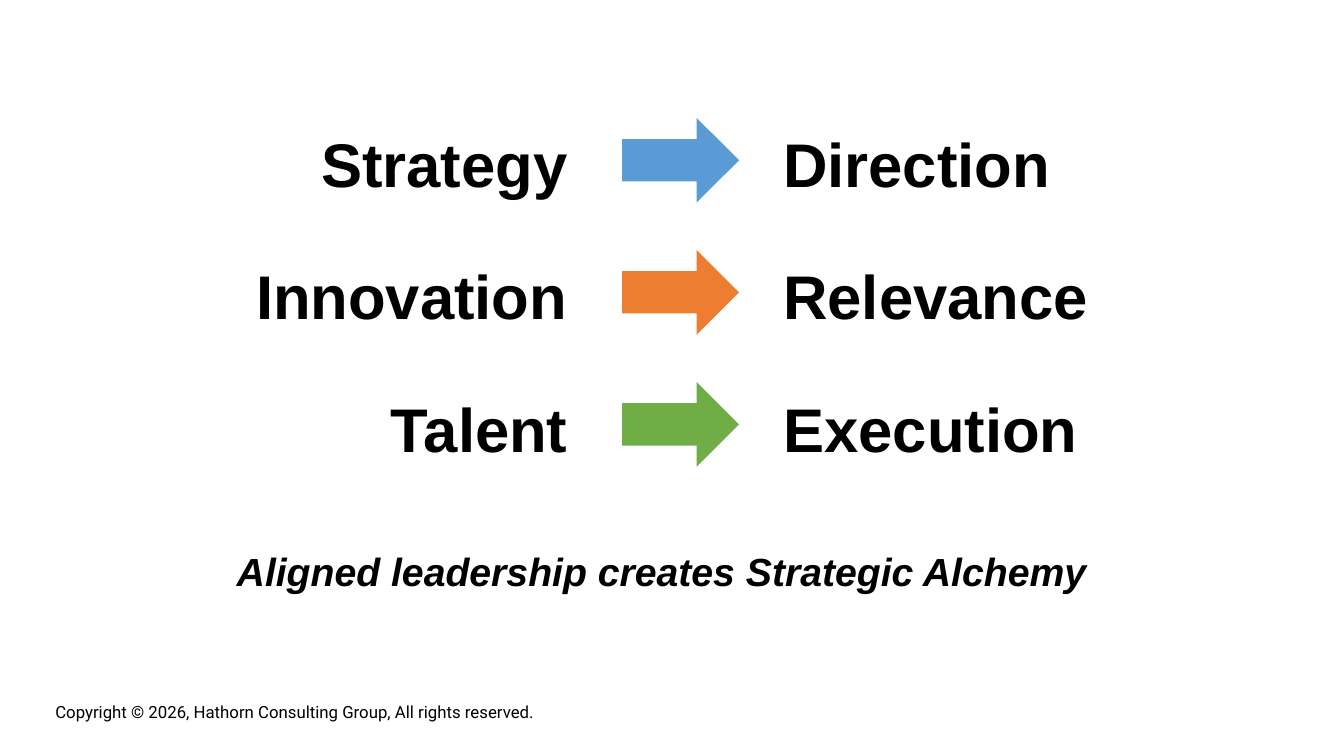
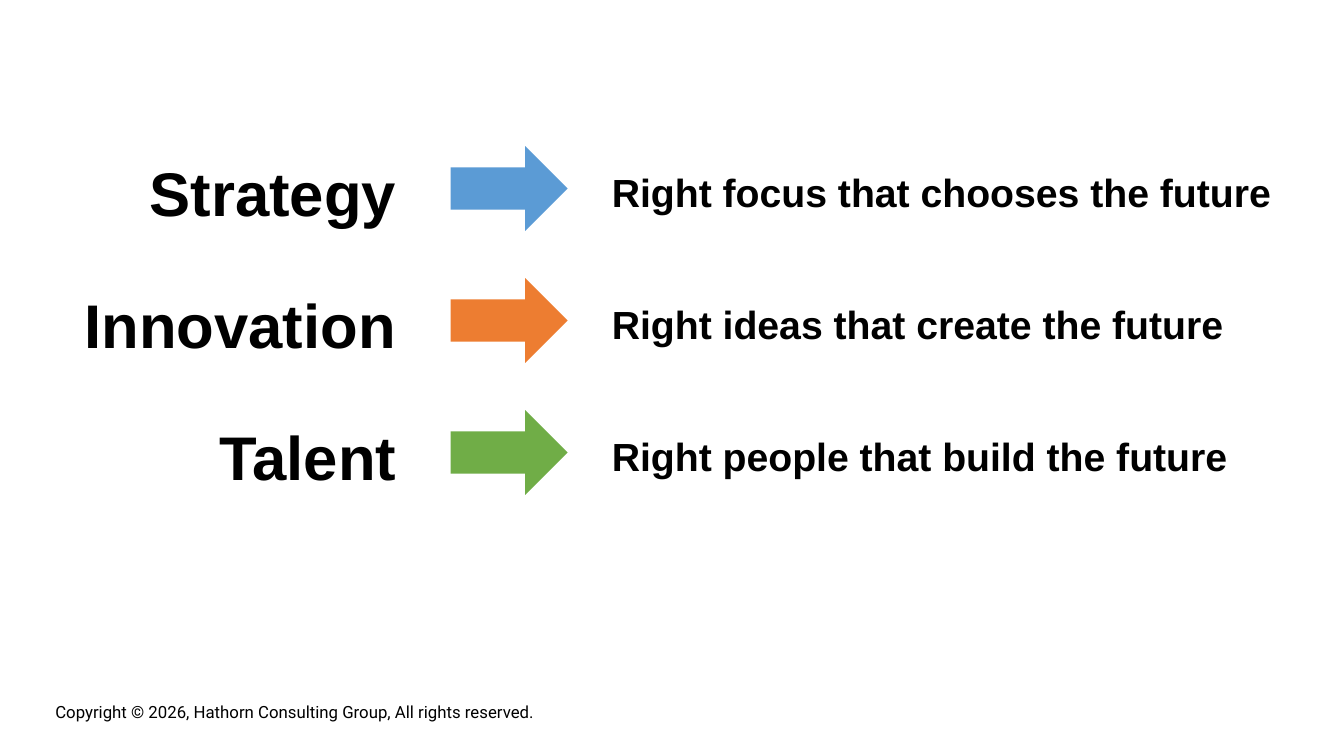
from pptx import Presentation
from pptx import util as u
from pptx.dml.color import RGBColor
from pptx.enum import shapes, text

COLOURS = {
    "text": "000000",
    "strategy": "5B9BD5",
    "innovation": "ED7D31",
    "talent": "70AD47",
}
TERMS = ["Strategy", "Innovation", "Talent"]
HEADING_FONT, FOOTER_FONT = "Arial", "Roboto"
FOOTER = "Copyright © 2026, Hathorn Consulting Group, All rights reserved."

# Row geometry in inches
ROW_HEIGHT, ROW_PITCH = 0.84, 1.31
ARROW_WIDTH = 1.16
TERM_WIDTH, TERM_GAP = 3.6, 0.44
OUTCOME_GAP = 0.34
TEXT_DROP = 0.03  # optical centring of capitals on the arrows


def add_label(slide, words, left, top, width, height, size, font=HEADING_FONT,
              bold=True, italic=False, align=text.PP_ALIGN.LEFT):
    shape = slide.shapes.add_textbox(*map(u.Inches, (left, top, width, height)))
    frame = shape.text_frame
    frame.word_wrap = True
    frame.vertical_anchor = text.MSO_ANCHOR.MIDDLE
    frame.text = words
    paragraph = frame.paragraphs[0]
    paragraph.alignment = align
    run_font = paragraph.runs[0].font
    run_font.name, run_font.size = font, u.Pt(size)
    run_font.bold, run_font.italic = bold, italic
    run_font.color.rgb = RGBColor.from_string(COLOURS["text"])


def add_arrow(slide, left, top, colour):
    shape = slide.shapes.add_shape(
        shapes.MSO_SHAPE.RIGHT_ARROW,
        *map(u.Inches, (left, top, ARROW_WIDTH, ROW_HEIGHT)))
    shape.shadow.inherit = False
    shape.fill.solid()
    shape.fill.fore_color.rgb = RGBColor.from_string(colour)
    shape.line.fill.background()


def add_rows(slide, outcomes, arrow_left, top, outcome_width, outcome_size):
    """Place each term, its arrow and its outcome on one row."""
    term_left = arrow_left - TERM_GAP - TERM_WIDTH
    outcome_left = arrow_left + ARROW_WIDTH + OUTCOME_GAP
    for index, (term, outcome) in enumerate(zip(TERMS, outcomes)):
        row_top = top + index * ROW_PITCH
        text_top = row_top + TEXT_DROP
        add_label(slide, term, term_left, text_top, TERM_WIDTH, ROW_HEIGHT, 44,
                  align=text.PP_ALIGN.RIGHT)
        add_arrow(slide, arrow_left, row_top, COLOURS[term.lower()])
        add_label(slide, outcome, outcome_left, text_top, outcome_width,
                  ROW_HEIGHT, outcome_size)


def add_slide(presentation):
    """Add a blank slide with the shared footer."""
    slide = presentation.slides.add_slide(presentation.slide_layouts[6])
    add_label(slide, FOOTER, 0.45, 6.91, 7.79, 0.3, 12, FOOTER_FONT, bold=False)
    return slide


def main():
    presentation = Presentation()
    presentation.slide_width = u.Inches(13.33)
    presentation.slide_height = u.Inches(7.5)

    # What each term leads to
    slide = add_slide(presentation)
    add_rows(slide, ["Direction", "Relevance", "Execution"],
             arrow_left=6.17, top=1.17, outcome_width=3.6, outcome_size=44)
    add_label(slide, "Aligned leadership creates Strategic Alchemy",
              2.25, 5.35 + TEXT_DROP, 9, 0.57, 28, italic=True)

    # What each term means for the future
    slide = add_slide(presentation)
    add_rows(slide, ["Right focus that chooses the future",
                     "Right ideas that create the future",
                     "Right people that build the future"],
             arrow_left=4.47, top=1.45, outcome_width=7.1, outcome_size=28)

    presentation.save("out.pptx")


if __name__ == "__main__":
    main()
